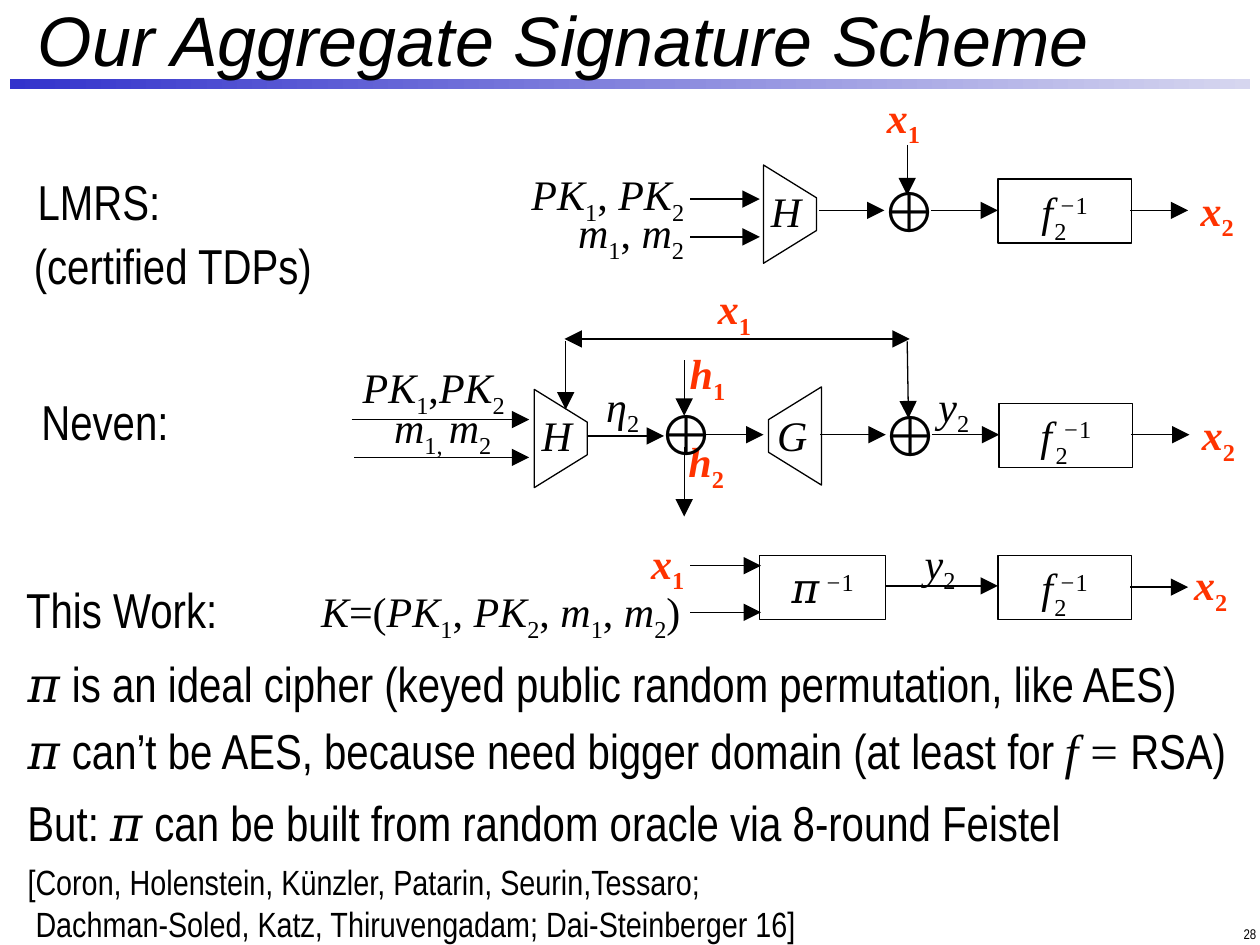
"""Build the slide that compares three aggregate signature schemes."""
from lxml import etree
from pptx import Presentation, util as u
from pptx.dml.color import RGBColor
from pptx.enum import shapes as es, text as et
from pptx.oxml import ns

THEME = dict(
    ink="000000", red="FF3300", bar=("3333CC", "D6D6EF"),
    title="Arial", body="Arial Narrow", math="Times New Roman",
    head=40, big=28, mid=24, cite=20, xor=32, num=8, line=0.75,
)
ALIGN = dict(l=et.PP_ALIGN.LEFT, c=et.PP_ALIGN.CENTER, r=et.PP_ALIGN.RIGHT)

# Run marks: i italic, r bold red, n body face, - subscript, ^ superscript
TITLE = "Our Aggregate Signature Scheme"
X1, X2, Y2 = "ri:x|r-:1", "ri:x|r-:2", "i:y|-:2"
PROSE = [
    (0.2, 1.31, 1.19, "big", "n:LMRS:"),
    (0.17, 1.82, 2.43, "big", "n:(certified TDPs)"),
    (0.23, 3.06, 1.22, "big", "n:Neven:"),
    (0.11, 4.55, 1.83, "big", "n:This Work:"),
    (0.12, 5.14, 9.39, "big",
     "i:𝜋 |n:is an ideal cipher (keyed public random permutation, like AES)"),
    (0.12, 5.67, 9.79, "big",
     "i:𝜋 |n:can’t be AES, because need bigger domain (at least for |i:f |:= |n:RSA)"),
    (0.12, 6.24, 8.64, "big",
     "n:But: |i:𝜋 |n:can be built from random oracle via 8-round Feistel"),
    (0.12, 6.78, 6.35, "cite",
     "n:[Coron, Holenstein, Künzler, Patarin, Seurin,Tessaro;\n"
     " Dachman-Soled, Katz, Thiruvengadam; Dai-Steinberger 16]"),
]
LABELS = [
    (4.12, 1.29, 1.54, "l", 1, "i:PK|-:1|:, |i:PK|-:2"),
    (4.49, 1.59, 1.2, "l", 1, "i:m|-:1|:, |i:m|-:2"),
    (6.02, 1.42, 0.53, "l", 1, "i:H"),
    (6.94, 0.68, 0.53, "l", 0.9, X1),
    (5.6, 2.2, 0.53, "l", 0.9, X1),
    (2.78, 2.82, 1.5, "l", 1, "i:PK|-:1|:,|i:PK|-:2"),
    (3.03, 3.14, 1.2, "l", 1, "i:m|-:1, |i:m|-:2"),
    (4.2, 3.2, 0.53, "l", 1, "i:H"),
    (4.63, 2.97, 0.64, "l", 1, "i: η|-:2"),
    (5.35, 2.71, 0.53, "c", 1, "ri:h|r-:1"),
    (5.34, 3.41, 0.53, "c", 1, "ri:h|r-:2"),
    (6.07, 3.2, 0.53, "l", 1, "i:G"),
    (7.35, 2.97, 0.53, "l", 1, Y2),
    (5.07, 4.22, 0.53, "l", 0.9, X1),
    (7.24, 4.22, 0.53, "l", 0.9, Y2),
    (2.45, 4.6, 3.2, "l", 1,
     "i:K|:=(|i:PK|-:1|:, |i:PK|-:2|:, |i:m|-:1|:, |i:m|-:2|:)"),
]
ARROWS = [
    (5.48, 1.58, 6.03, 1.58), (5.48, 1.88, 6.03, 1.88), (7.2, 1.15, 7.2, 1.55),
    (2.79, 3.33, 4.2, 3.33), (2.81, 3.63, 4.2, 3.63), (4.49, 2.71, 4.49, 3.25),
    (4.66, 3.46, 5.27, 3.46), (5.43, 2.86, 5.43, 3.3), (5.43, 3.55, 5.43, 4.1),
    (5.6, 3.45, 6.06, 3.45), (7.2, 2.71, 7.21, 3.32),
    (5.48, 4.49, 6.04, 4.49), (5.48, 4.86, 6.04, 4.86), (7.03, 4.65, 7.92, 4.65),
]
# Wide edge x, narrow edge x, centre y
TRAPS = [(6.06, 6.48, 1.7), (4.24, 4.66, 3.48), (6.52, 6.1, 3.46)]
# Box left, box top, x2 left, x2 top, fed by an xor, content
ENDS = [
    (7.92, 1.42, 9.43, 1.42, True, "i:f|i^: −|^:1"),
    (7.93, 3.2, 9.44, 3.2, True, "i:f |i^:−|^:1"),
    (7.92, 4.41, 9.38, 4.39, False, "i:f|i^: −|^:1"),
]


def tint(name):
    return RGBColor.from_string(name)


def place(shape, x, y, w, h):
    shape.left, shape.top, shape.width, shape.height = map(u.Inches, (x, y, w, h))


def write(frame, code, size, align="l", lead=1):
    frame.word_wrap = False
    frame.vertical_anchor = et.MSO_ANCHOR.TOP
    para = frame.paragraphs[0]
    para.alignment = ALIGN[align]
    if lead != 1:
        para.line_spacing = lead
    for part in code.split("|"):
        marks, _, words = part.partition(":")
        for n, line in enumerate(words.split("\n")):
            if n:
                para.add_line_break()
            run = para.add_run()
            run.text = line
            font = run.font
            font.size = u.Pt(THEME[size])
            font.name = THEME["body" if "n" in marks else "math"]
            font.italic, font.bold = "i" in marks, "r" in marks
            font.color.rgb = tint(THEME["red" if "r" in marks else "ink"])
            if "-" in marks or "^" in marks:
                base = "-25000" if "-" in marks else "30000"
                font._element.set("baseline", base)


def label(page, x, y, w, h, code, size="mid", align="l", lead=1):
    box = page.shapes.add_textbox(*map(u.Inches, (x, y, w, h)))
    write(box.text_frame, code, size, align, lead)
    return box


def edge(shape):
    shape.shadow.inherit = False
    shape.fill.background()
    shape.line.color.rgb = tint(THEME["ink"])
    shape.line.width = u.Pt(THEME["line"])


def block(page, x, y, w, code):
    box = page.shapes.add_shape(
        es.MSO_SHAPE.RECTANGLE, *map(u.Inches, (x, y, w, 0.51)))
    edge(box)
    write(box.text_frame, code, "mid", "c")


def arrow(page, x, y, to_x, to_y, both=False):
    wire = page.shapes.add_connector(
        es.MSO_CONNECTOR.STRAIGHT, *map(u.Inches, (x, y, to_x, to_y)))
    wire.line.color.rgb = tint(THEME["ink"])
    wire.line.width = u.Pt(THEME["line"])
    props = wire.line._get_or_add_ln()
    for end in ("headEnd", "tailEnd") if both else ("tailEnd",):
        etree.SubElement(
            props, ns.qn("a:" + end), type="triangle", w="lg", len="lg")
    etree.SubElement(props.getparent(), ns.qn("a:effectLst"))


def trap(page, wide, thin, mid):
    pts = [(wide, mid + 0.39), (thin, mid + 0.13),
           (thin, mid - 0.13), (wide, mid - 0.39)]
    pts = [tuple(map(u.Inches, pt)) for pt in pts]
    pen = page.shapes.build_freeform(*pts[0])
    pen.add_line_segments(pts[1:], close=True)
    edge(pen.convert_to_shape())


def xor(page, mid, y):
    label(page, mid - 0.3, y, 0.6, 0.63, ":⊕", "xor", "c")


def finish(page, x, y, out_x, out_y, fed, code):
    mid = y + 0.25
    block(page, x, y, 1.06, code)
    label(page, x + 0.35, y + 0.02, 0.61, 0.5, "-:2")
    label(page, out_x, out_y, 0.53, 0.5, X2, lead=0.9)
    arrow(page, x + 1.05, mid, x + 1.51, mid)
    if fed:
        xor(page, x - 0.72, y - 0.07)
        arrow(page, x - 0.53, mid, x, mid)
        arrow(page, x - 1.42, mid, x - 0.9, mid)


def header(page):
    head = page.shapes.title
    place(head, 0.2, 0.07, 8.96, 0.47)
    frame = head.text_frame
    frame.auto_size = et.MSO_AUTO_SIZE.NONE
    frame.vertical_anchor = et.MSO_ANCHOR.MIDDLE
    para = frame.paragraphs[0]
    para.alignment = ALIGN["l"]
    run = para.add_run()
    run.text = TITLE
    run.font.name, run.font.size = THEME["title"], u.Pt(THEME["head"])
    run.font.italic = True
    run.font.color.rgb = tint(THEME["ink"])
    bar = page.shapes.add_shape(
        es.MSO_SHAPE.RECTANGLE, *map(u.Inches, (0.08, 0.63, 9.84, 0.08)))
    bar.shadow.inherit = False
    bar.line.fill.background()
    bar.fill.gradient()
    bar.fill.gradient_angle = 0
    for stop, name in zip(bar.fill.gradient_stops, THEME["bar"]):
        stop.color.rgb = tint(name)
    head.element.addprevious(bar.element)


def main():
    deck = Presentation()
    deck.slide_width, deck.slide_height = u.Inches(10), u.Inches(7.5)
    page = deck.slides.add_slide(deck.slide_layouts[5])
    header(page)
    for x, y, w, size, code in PROSE:
        label(page, x, y, w, 0.57, code, size)
    for x, y, w, align, lead, code in LABELS:
        label(page, x, y, w, 0.5, code, align=align, lead=lead)
    for ends in ARROWS:
        arrow(page, *ends)
    arrow(page, 4.48, 2.69, 7.22, 2.69, both=True)
    for sides in TRAPS:
        trap(page, *sides)
    for row in ENDS:
        finish(page, *row)
    block(page, 6.03, 4.41, 1, "i:𝜋|i^: −|^:1")
    xor(page, 5.43, 3.12)
    num = label(page, 7.99, 7.16, 2.08, 0.5, "n:28", "num", "r")
    num.text_frame.vertical_anchor = et.MSO_ANCHOR.MIDDLE
    deck.save("out.pptx")


if __name__ == "__main__":
    main()
